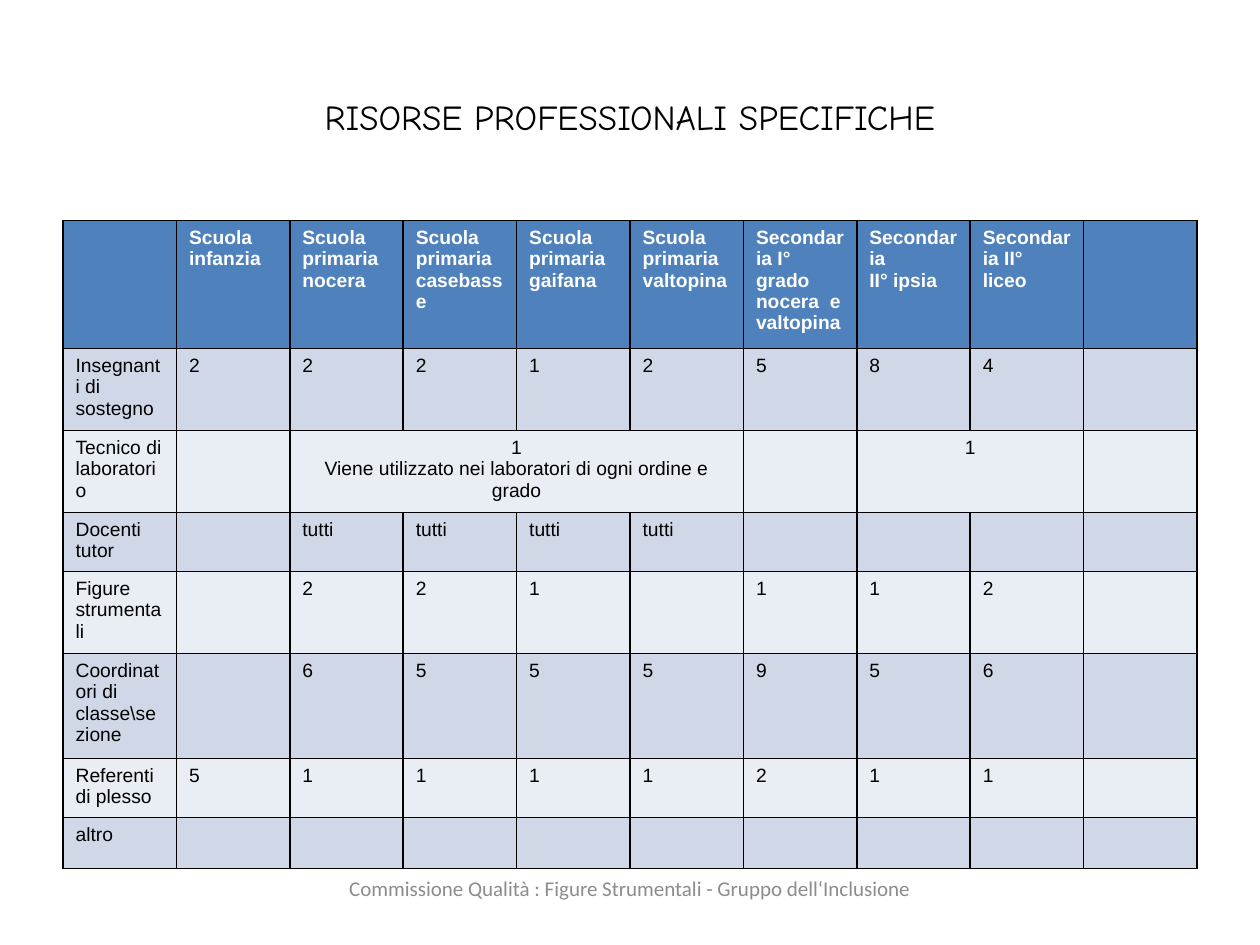
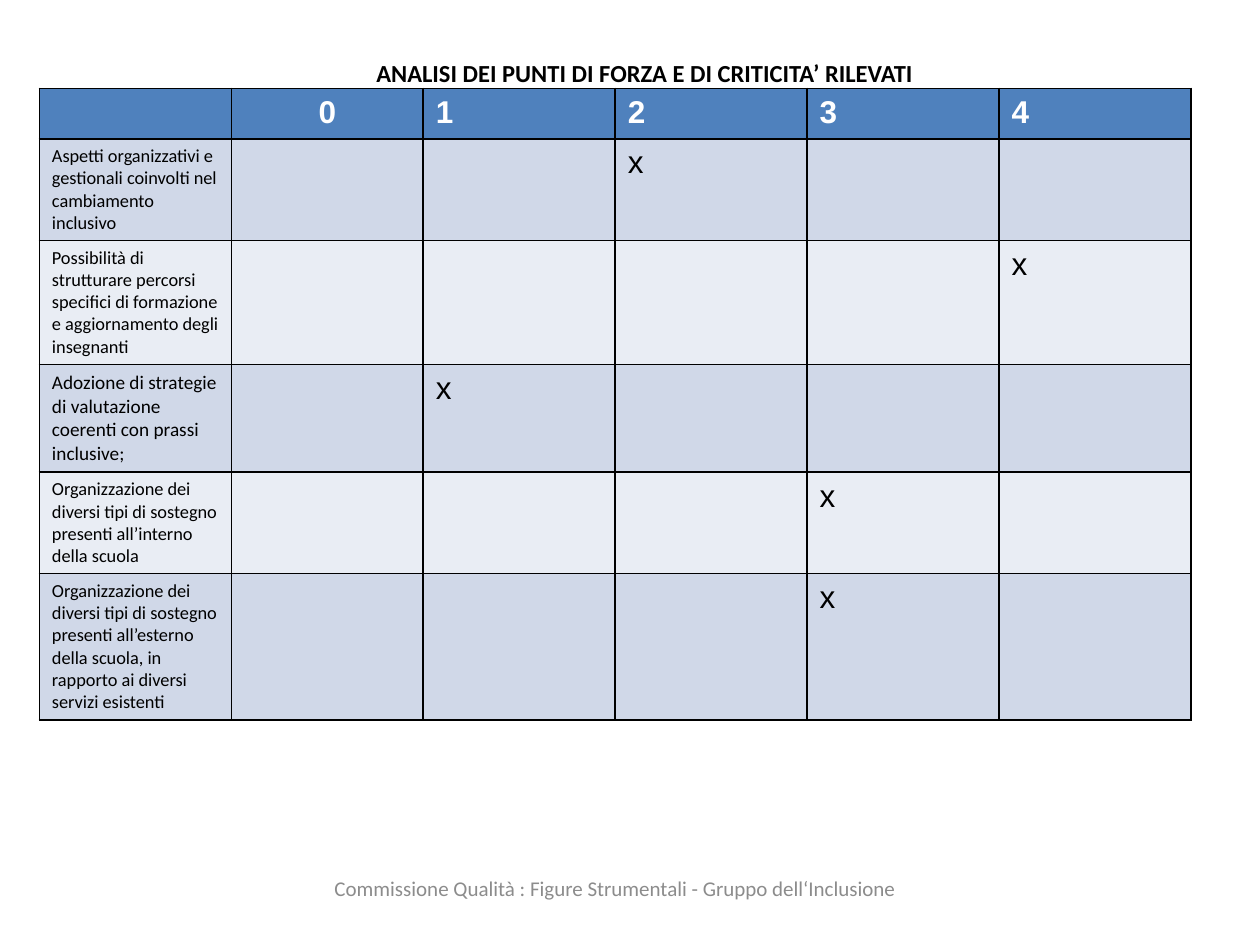
from dataclasses import dataclass
from typing import Optional

from lxml import etree
from pptx import Presentation
from pptx.dml.color import RGBColor
from pptx.enum import text as t
from pptx.oxml import ns
from pptx.util import Pt


@dataclass(frozen=True)
class Theme:
    black: str = "000000"
    white: str = "FFFFFF"
    header: str = "4F81BD"
    bands: tuple[str, str] = ("D0D8E8", "E9EDF4")
    footer_grey: str = "8C8C8C"
    border_width: float = 1
    small: float = 10.5
    regular: float = 11
    footer: float = 12
    subtitle: float = 14
    mark: float = 18
    title: float = 20


THEME = Theme()


@dataclass(frozen=True)
class Box:
    left: float
    top: float
    width: float
    height: float


@dataclass(frozen=True)
class Style:
    size: float
    font: str = "Arial"
    color: str = THEME.black
    bold: bool = False
    centred: bool = False


@dataclass(frozen=True)
class Cell:
    text: str
    style: Style
    span: int = 1


Row = list[Optional[Cell]]

FOOTER_TEXT = "Commissione Qualità : Figure Strumentali - Gruppo dell‘Inclusione"
FOOTER_TOP, FOOTER_HEIGHT = 500.4, 28.8
FOOTER_STYLE = Style(THEME.footer, "Calibri", THEME.footer_grey, centred=True)

STAFF_HEADER = Style(THEME.regular, color=THEME.white, bold=True)
STAFF_BODY = Style(THEME.regular)
STAFF_CENTRED = Style(THEME.regular, centred=True)
SCHOOLS = ["", "Scuola infanzia", "Scuola primaria nocera",
           "Scuola primaria casebasse", "Scuola primaria\ngaifana",
           "Scuola primaria valtopina", "Secondaria I° grado nocera  e valtopina",
           "Secondaria\nII° ipsia", "Secondaria II° liceo", ""]
STAFF = [
    ["Insegnanti di sostegno", "2", "2", "2", "1", "2", "5", "8", "4", ""],
    ["Tecnico di laboratorio"] + [""] * 9,
    ["Docenti tutor", ""] + ["tutti"] * 4 + [""] * 4,
    ["Figure strumentali", "", "2", "2", "1", "", "1", "1", "2", ""],
    ["Coordinatori di classe\\sezione", "", "6", "5", "5", "5", "9", "5", "6", ""],
    ["Referenti di plesso", "5", "1", "1", "1", "1", "2", "1", "1", ""],
    ["altro"] + [""] * 9,
]
STAFF_HEIGHTS = [68.5, 43.75, 43.75, 31.75, 43.75, 56, 31.75, 29]
TECHNICIAN_ROW = 2

SCORE_HEADER = Style(THEME.mark, color=THEME.white, bold=True)
SCORE_HEADER_CENTRED = Style(THEME.mark, color=THEME.white, bold=True, centred=True)
SCORE_MARK = Style(THEME.mark)
SCORES = range(5)
SCORE_HEIGHTS = [27.5, 58, 71, 61.5, 58, 83.75]


@dataclass(frozen=True)
class Criterion:
    label: str
    score: int
    size: float = THEME.small


CRITERIA = [
    Criterion("Aspetti organizzativi e gestionali coinvolti nel cambiamento inclusivo", 2),
    Criterion("Possibilità di strutturare percorsi specifici di formazione e "
              "aggiornamento degli insegnanti", 4),
    Criterion("Adozione di strategie di valutazione coerenti con prassi inclusive;", 1,
              THEME.regular),
    Criterion("Organizzazione dei diversi tipi di sostegno presenti all’interno "
              "della scuola", 3),
    Criterion("Organizzazione dei diversi tipi di sostegno presenti all’esterno della "
              "scuola, in rapporto ai diversi servizi esistenti", 3),
]


def rgb(color: str) -> RGBColor:
    return RGBColor.from_string(color)


def write(frame, content: str, style: Style) -> None:
    """Fill a text frame, one paragraph for each line of content."""
    for index, line in enumerate(content.split("\n")):
        paragraph = frame.add_paragraph() if index else frame.paragraphs[0]
        paragraph.alignment = t.PP_ALIGN.CENTER if style.centred else t.PP_ALIGN.LEFT
        run = paragraph.add_run()
        run.text = line
        run.font.name = style.font
        run.font.size = Pt(style.size)
        run.font.bold = style.bold
        run.font.color.rgb = rgb(style.color)


def place(shape, box: Box) -> None:
    shape.left, shape.top = Pt(box.left), Pt(box.top)
    shape.width, shape.height = Pt(box.width), Pt(box.height)


def add_borders(cell) -> None:
    properties = cell._tc.get_or_add_tcPr()
    for side in ("lnL", "lnR", "lnT", "lnB"):
        line = etree.SubElement(properties, ns.qn(f"a:{side}"),
                                w=str(Pt(THEME.border_width)))
        fill = etree.SubElement(line, ns.qn("a:solidFill"))
        etree.SubElement(fill, ns.qn("a:srgbClr"), val=THEME.black)


def add_grid(slide, left: float, top: float, width: float,
             heights: list[float], rows: list[Row]) -> None:
    """Draw a table with equal columns, a header row and alternating bands."""
    columns = len(rows[0])
    table = slide.shapes.add_table(len(rows), columns, Pt(left), Pt(top),
                                   Pt(width), Pt(sum(heights))).table
    for column in table.columns:
        column.width = Pt(width / columns)
    for r, (row, height) in enumerate(zip(rows, heights)):
        table.rows[r].height = Pt(height)
        background = THEME.bands[(r - 1) % 2] if r else THEME.header
        for c, entry in enumerate(row):
            cell = table.cell(r, c)
            add_borders(cell)
            cell.fill.solid()
            cell.fill.fore_color.rgb = rgb(background)
            if entry is None:
                continue
            if entry.span > 1:
                cell.merge(table.cell(r, c + entry.span - 1))
            write(cell.text_frame, entry.text, entry.style)


def start_slide(deck, title: str, title_box: Box, title_style: Style,
                footer_left: float, footer_width: float):
    """Add a slide with its title and the shared footer."""
    slide = deck.slides.add_slide(deck.slide_layouts[5])
    heading = slide.shapes.title
    place(heading, title_box)
    heading.text_frame.auto_size = t.MSO_AUTO_SIZE.NONE
    heading.text_frame.vertical_anchor = t.MSO_ANCHOR.MIDDLE
    write(heading.text_frame, title, title_style)

    footer = slide.shapes.add_textbox(Pt(footer_left), Pt(FOOTER_TOP),
                                      Pt(footer_width), Pt(FOOTER_HEIGHT))
    footer.text_frame.word_wrap = True
    footer.text_frame.margin_top = Pt(0)
    write(footer.text_frame, FOOTER_TEXT, FOOTER_STYLE)
    return slide


def styled_row(texts: list[str], style: Style) -> Row:
    return [Cell(content, style) if content else None for content in texts]


def build_staff_slide(deck) -> None:
    left, width = 36, 648
    slide = start_slide(deck, "RISORSE PROFESSIONALI SPECIFICHE",
                        Box(left, 21.6, width, 90),
                        Style(THEME.title, "Comic Neue", centred=True), left, width)
    rows = [styled_row(SCHOOLS, STAFF_HEADER)]
    rows += [styled_row(line, STAFF_BODY) for line in STAFF]
    rows[TECHNICIAN_ROW][2] = Cell(
        "1\nViene utilizzato nei laboratori di ogni ordine e grado", STAFF_CENTRED, 4)
    rows[TECHNICIAN_ROW][7] = Cell("1", STAFF_CENTRED, 2)
    add_grid(slide, left, 126, width, STAFF_HEIGHTS, rows)


def build_score_slide(deck) -> None:
    left, width = 22.5, 658.2
    slide = start_slide(deck, "ANALISI DEI PUNTI DI FORZA E DI CRITICITA’ RILEVATI ",
                        Box(56.2, 21.6, 627.8, 40.3),
                        Style(THEME.subtitle, "Calibri", bold=True, centred=True),
                        left, width)
    rows: list[Row] = [[None] + [
        Cell(str(score), SCORE_HEADER if score else SCORE_HEADER_CENTRED)
        for score in SCORES]]
    for criterion in CRITERIA:
        label = Cell(criterion.label, Style(criterion.size, "Calibri"))
        rows.append([label] + [Cell("x", SCORE_MARK) if score == criterion.score else None
                               for score in SCORES])
    add_grid(slide, left, 50.5, width, SCORE_HEIGHTS, rows)


def main() -> None:
    deck = Presentation()
    deck.slide_width, deck.slide_height = Pt(720), Pt(540)
    build_staff_slide(deck)
    build_score_slide(deck)
    deck.save("out.pptx")


if __name__ == "__main__":
    main()
